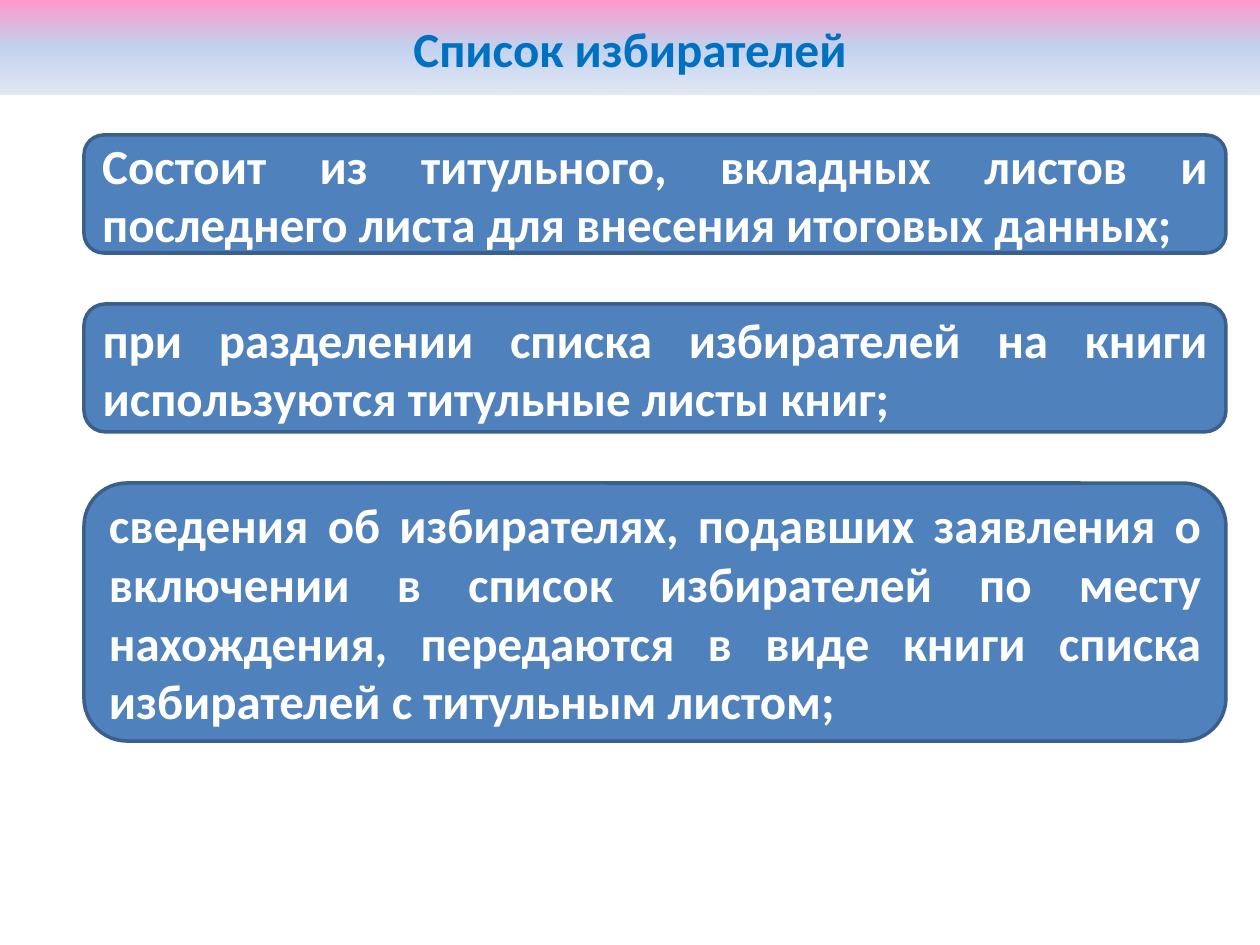
import copy

import pptx
import pptx.dml.color
import pptx.enum.shapes
import pptx.enum.text
import pptx.util

PX = 914400 / 126
WIDTH, HEIGHT = 1260, 945
FONT, SIZE = "Calibri", 28
COLORS = {
    "title": "0070C0",
    "card": "4F81BD",
    "border": "3A5F8C",
    "text": "FFFFFF",
}
BANNER_STOPS = [(0, "FF99CC"), (0.5, "C2D1ED"), (1, "E1E8F5")]
CARD_GAP = 51
CARDS = [
    (118, "Состоит из титульного, вкладных листов и последнего листа "
          "для внесения итоговых данных;"),
    (128, "при разделении списка избирателей на книги используются "
          "титульные листы книг;"),
    (258, "сведения об избирателях, подавших заявления о включении в список "
          "избирателей по месту нахождения, передаются в виде книги списка "
          "избирателей с титульным листом;"),
]


def px(n):
    return pptx.util.Emu(round(n * PX))


def rgb(value):
    return pptx.dml.color.RGBColor.from_string(value)


def write(shape, text, color, align):
    tf = shape.text_frame
    tf.word_wrap = True
    tf.auto_size = pptx.enum.text.MSO_AUTO_SIZE.NONE
    tf.vertical_anchor = pptx.enum.text.MSO_ANCHOR.MIDDLE
    p = tf.paragraphs[0]
    p.text = text
    p.alignment = align
    p.font.name = FONT
    p.font.size = pptx.util.Pt(SIZE)
    p.font.bold = True
    p.font.color.rgb = rgb(color)


def fill_gradient(fill, stops):
    """Fill from top to bottom through the given (position, colour) stops."""
    fill.gradient()
    fill.gradient_angle = 270
    # python-pptx starts with two stops, so the missing ones are cloned.
    gs_list = fill._fill._gradFill.gsLst
    while len(gs_list) < len(stops):
        gs_list.append(copy.deepcopy(gs_list[0]))
    for stop, (position, color) in zip(fill.gradient_stops, stops):
        stop.position = position
        stop.color.rgb = rgb(color)


def add_banner(s, left, top, width, height):
    title = s.shapes.title
    title.left, title.top = px(left), px(top)
    title.width, title.height = px(width), px(height)
    fill_gradient(title.fill, BANNER_STOPS)
    write(title, "Список избирателей", COLORS["title"],
          pptx.enum.text.PP_ALIGN.CENTER)


def add_cards(s, left, top, width):
    """Stack the rounded cards downwards with equal gaps."""
    for height, text in CARDS:
        sp = s.shapes.add_shape(
            pptx.enum.shapes.MSO_SHAPE.ROUNDED_RECTANGLE,
            px(left), px(top), px(width), px(height))
        sp.shadow.inherit = False
        sp.fill.solid()
        sp.fill.fore_color.rgb = rgb(COLORS["card"])
        sp.line.color.rgb = rgb(COLORS["border"])
        sp.line.width = pptx.util.Pt(2)
        write(sp, text, COLORS["text"], pptx.enum.text.PP_ALIGN.JUSTIFY)
        top += height + CARD_GAP


def main():
    prs = pptx.Presentation()
    prs.slide_width, prs.slide_height = px(WIDTH), px(HEIGHT)
    s = prs.slides.add_slide(prs.slide_layouts.get_by_name("Title Only"))
    add_banner(s, 0, 0, WIDTH, 95)
    add_cards(s, 84, 135, 1142)
    prs.save("out.pptx")


if __name__ == "__main__":
    main()
